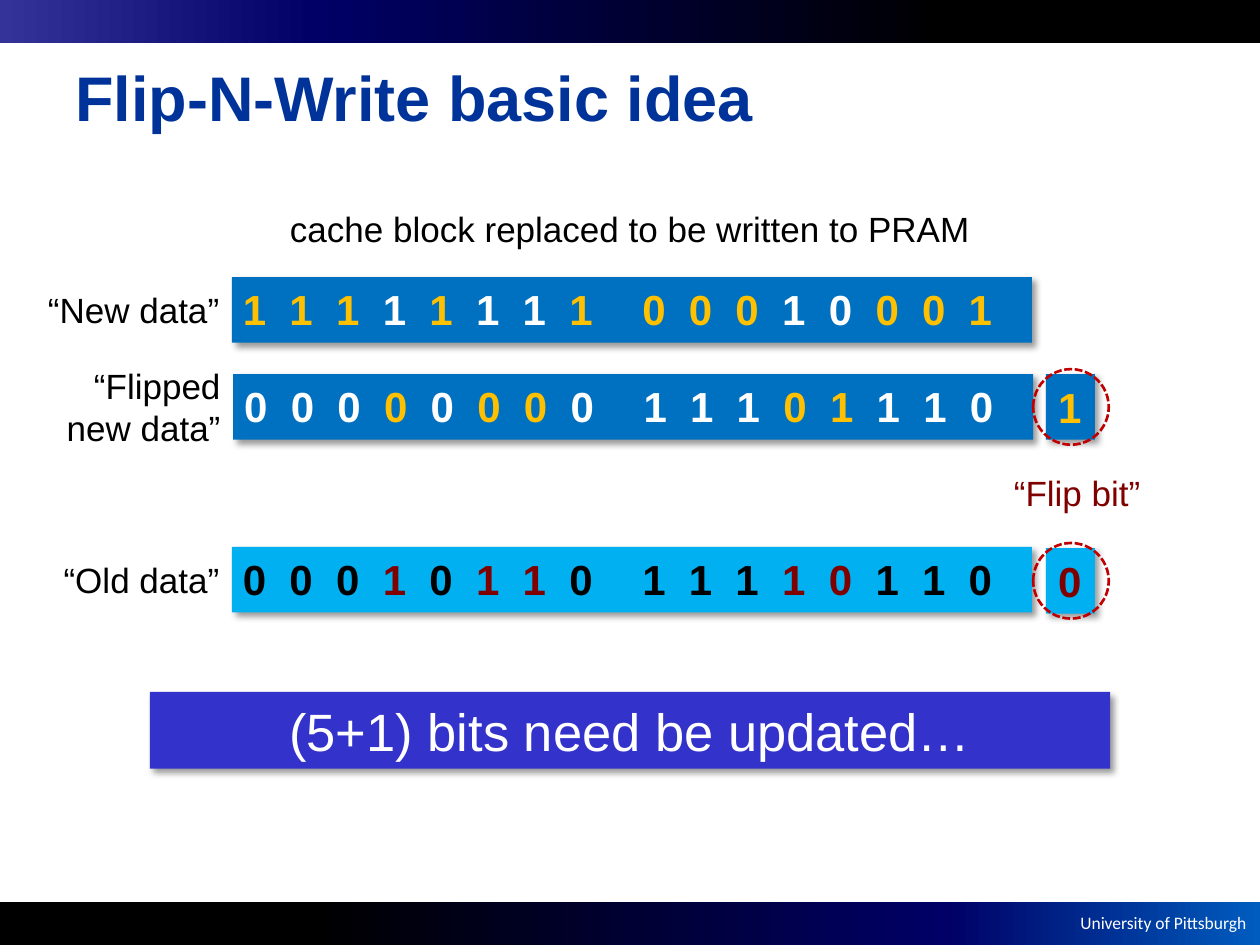
from itertools import groupby

from lxml.etree import SubElement
from pptx import Presentation
from pptx.dml.color import RGBColor
from pptx.enum.dml import MSO_LINE
from pptx.enum.shapes import MSO_SHAPE
from pptx.enum.text import MSO_ANCHOR, MSO_AUTO_SIZE, PP_ALIGN
from pptx.oxml.ns import qn
from pptx.util import Inches, Pt

WIDTH, HEIGHT = Inches(10), Inches(7.5)
COL, ROW = WIDTH / 100, HEIGHT / 75

BLACK = RGBColor(0x00, 0x00, 0x00)
WHITE = RGBColor(0xFF, 0xFF, 0xFF)
NAVY = RGBColor(0x00, 0x00, 0x66)
INDIGO = RGBColor(0x33, 0x33, 0x99)
AZURE = RGBColor(0x00, 0x5C, 0xBF)
TITLE_BLUE = RGBColor(0x00, 0x33, 0x99)
NEW_BLUE = RGBColor(0x00, 0x70, 0xC0)
OLD_BLUE = RGBColor(0x00, 0xB0, 0xF0)
BANNER_BLUE = RGBColor(0x33, 0x33, 0xCC)
AMBER = RGBColor(0xFF, 0xC0, 0x00)
MAROON = RGBColor(0x80, 0x00, 0x00)
RED = RGBColor(0xC0, 0x00, 0x00)

NEW = ("11111111", "00010001")
FLIPPED = ("00000000", "11101110")
OLD = ("00010110", "11110110")


def grid(left, top, width, height):
    """Turn columns and rows of the slide grid into lengths."""
    return [int(n * unit) for n, unit in zip((left, top, width, height), (COL, ROW, COL, ROW))]


def add_run(p, text, size, color, bold=False, font="Arial"):
    """Append one formatted run to a paragraph."""
    r = p.add_run()
    r.text = text
    r.font.name, r.font.size, r.font.bold = font, Pt(size), bold
    r.font.color.rgb = color
    return r


def add_label(shapes, at, lines, size=20, color=BLACK, align=PP_ALIGN.RIGHT, **style):
    """Add an unwrapped text box with one paragraph per line."""
    s = shapes.add_textbox(*grid(*at))
    tf = s.text_frame
    tf.word_wrap = False
    tf.auto_size = MSO_AUTO_SIZE.SHAPE_TO_FIT_TEXT
    for i, line in enumerate(lines):
        p = tf.add_paragraph() if i else tf.paragraphs[0]
        p.alignment = align
        add_run(p, line, size, color, **style)
    return s


def add_bar(shapes, at, color):
    """Add a filled rectangle with a soft diagonal shadow."""
    s = shapes.add_shape(MSO_SHAPE.RECTANGLE, *grid(*at))
    s.fill.solid()
    s.fill.fore_color.rgb = color
    s.line.fill.background()
    s.shadow.inherit = False
    effects = s._element.spPr.find(qn("a:effectLst"))
    shadow = SubElement(effects, qn("a:outerShdw"), blurRad=str(Pt(4)), dist=str(Pt(3)),
                        dir=str(45 * 60000), algn="tl", rotWithShape="0")
    tint = SubElement(shadow, qn("a:srgbClr"), val=str(BLACK))
    SubElement(tint, qn("a:alpha"), val="40000")
    return s


def add_gradient_band(shapes, top, stops):
    """Add a full-width band with a left-to-right gradient."""
    s = shapes.add_shape(MSO_SHAPE.RECTANGLE, *grid(0, top, 100, 3.4))
    s.shadow.inherit = False
    s.line.fill.background()
    s.fill.gradient()
    s.fill.gradient_angle = 0
    stop_list = s._element.spPr.find(qn("a:gradFill")).find(qn("a:gsLst"))
    for stop in list(stop_list):
        stop_list.remove(stop)
    for share, color in stops:
        stop = SubElement(stop_list, qn("a:gs"), pos=str(share * 1000))
        SubElement(stop, qn("a:srgbClr"), val=str(color))


def add_bits(shapes, at, bits, other, plain, marked):
    """Write spaced bits, marking those that differ from the other word."""
    s = add_label(shapes, at, [], align=PP_ALIGN.LEFT)
    p = s.text_frame.paragraphs[0]
    pairs = list(zip(bits, other))
    written = 0
    for differs, group in groupby(pairs, key=lambda pair: pair[0] != pair[1]):
        word = [bit for bit, _ in group]
        written += len(word)
        text = " ".join(word) + (" " if written < len(pairs) else "")
        r = add_run(p, text, 24, marked if differs else plain, bold=True)
        r.font._element.set("spc", "333")


def add_word(shapes, left, top, words, others, fill, plain, marked):
    """Add a bar that holds two bytes of data."""
    add_bar(shapes, (left, top, 63.5, 5.2), fill)
    for x, word, other in zip((left - 0.1, left + 31.6), words, others):
        add_bits(shapes, (x, top, 33, 5), word, other, plain, marked)


def add_flip_bit(shapes, top, bit, other, fill, marked):
    """Add a flip-bit cell circled by a dashed ring."""
    cell = shapes.add_group_shape().shapes
    add_bar(cell, (83, top, 3.9, 5.2), fill)
    add_bits(cell, (83, top + 0.1, 4, 5), bit, other, WHITE, marked)
    s = shapes.add_shape(MSO_SHAPE.OVAL, *grid(82, top - 0.4, 6, 6))
    s.shadow.inherit = False
    s.fill.background()
    s.line.color.rgb = RED
    s.line.width = Pt(1.5)
    s.line.dash_style = MSO_LINE.SQUARE_DOT
    s.line._ln.find(qn("a:prstDash")).set("val", "sysDash")


def add_title(shapes, text):
    """Add the slide title."""
    s = shapes.add_textbox(*grid(5, 1.4, 90, 12.5))
    tf = s.text_frame
    tf.word_wrap = True
    tf.vertical_anchor = MSO_ANCHOR.MIDDLE
    add_run(tf.paragraphs[0], text, 36, TITLE_BLUE, bold=True)


def add_banner(shapes, text):
    """Add the concluding statement on a bar."""
    s = add_bar(shapes, (11.9, 54.9, 76.2, 6.1), BANNER_BLUE)
    p = s.text_frame.paragraphs[0]
    p.alignment = PP_ALIGN.CENTER
    add_run(p, text, 30, WHITE)


def main():
    """Build the slide and save it."""
    prs = Presentation()
    prs.slide_width, prs.slide_height = WIDTH, HEIGHT
    shapes = prs.slides.add_slide(prs.slide_layouts[6]).shapes

    add_gradient_band(shapes, 71.6, [(0, BLACK), (25, BLACK), (75, NAVY), (100, AZURE)])
    add_label(shapes, (83.3, 71.9, 16.6, 2.7), ["University of Pittsburgh"], 10, WHITE,
              font="Calibri")
    add_gradient_band(shapes, 0, [(0, INDIGO), (25, NAVY), (75, BLACK), (100, BLACK)])
    add_title(shapes, "Flip-N-Write basic idea")
    add_label(shapes, (21.4, 16, 57.2, 4.4), ["cache block replaced to be written to PRAM"],
              align=PP_ALIGN.CENTER)

    add_word(shapes, 18.4, 22, NEW, OLD, NEW_BLUE, WHITE, AMBER)
    add_word(shapes, 18.5, 29.7, FLIPPED, OLD, NEW_BLUE, WHITE, AMBER)
    add_word(shapes, 18.4, 43.4, OLD, FLIPPED, OLD_BLUE, BLACK, MAROON)
    add_label(shapes, (2.6, 22.4, 15.8, 4.4), ["“New data”"])
    add_label(shapes, (4.2, 28.4, 14.3, 7.7), ["“Flipped", "new data”"])
    add_label(shapes, (3.9, 43.8, 14.5, 4.4), ["“Old data”"])

    add_flip_bit(shapes, 29.7, "1", "0", NEW_BLUE, AMBER)
    add_flip_bit(shapes, 43.5, "0", "1", OLD_BLUE, MAROON)
    add_label(shapes, (79.3, 36.9, 12.2, 4.4), ["“Flip bit”"], color=MAROON)
    add_banner(shapes, "(5+1) bits need be updated…")
    prs.save("out.pptx")


if __name__ == "__main__":
    main()
